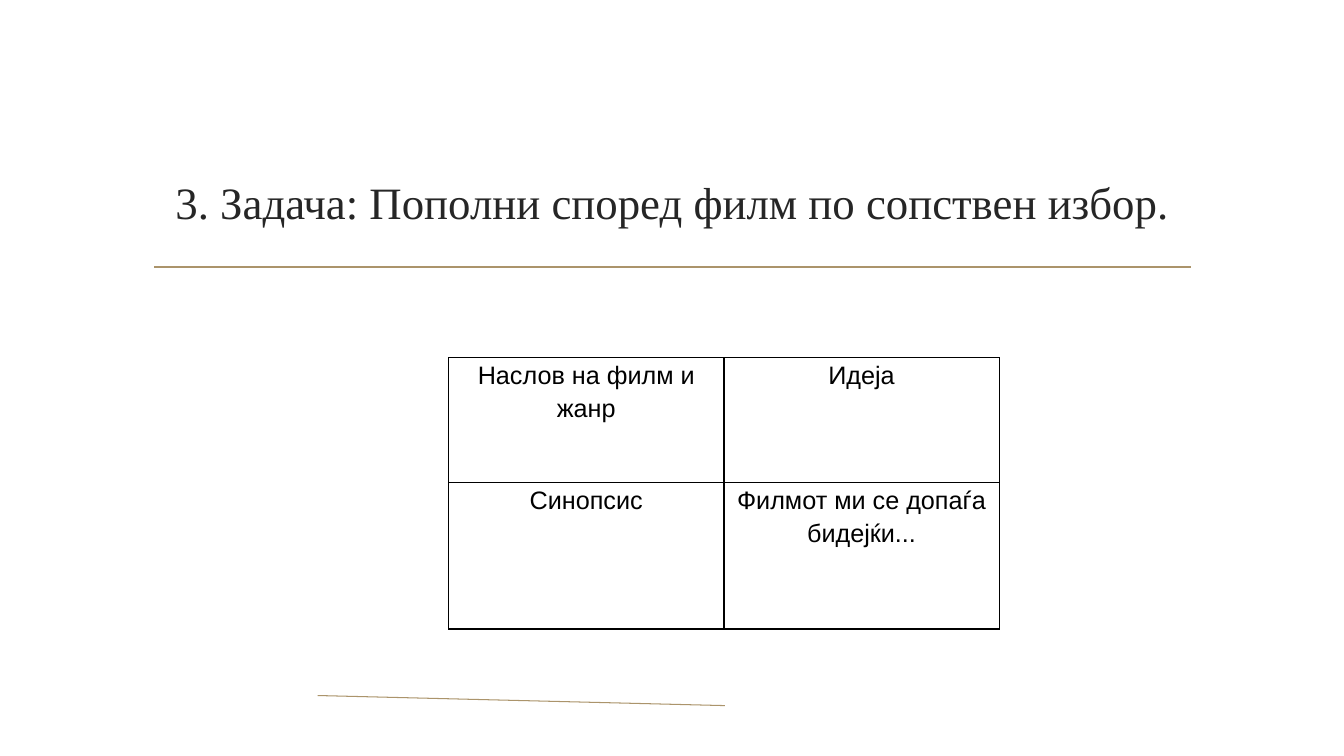
from lxml import etree
from pptx import Presentation
from pptx.dml.color import RGBColor
from pptx.enum.shapes import MSO_CONNECTOR
from pptx.enum.text import MSO_ANCHOR, PP_ALIGN
from pptx.oxml.ns import qn
from pptx.util import Inches, Pt

STRAIGHT = MSO_CONNECTOR.STRAIGHT
MIDDLE = MSO_ANCHOR.MIDDLE
TOP = MSO_ANCHOR.TOP
CENTER = PP_ALIGN.CENTER

GOLD = RGBColor(0xAB, 0x94, 0x6B)
CHARCOAL = RGBColor(0x26, 0x26, 0x26)
BLACK = RGBColor(0x00, 0x00, 0x00)

ROW_HEIGHTS = (1.24, 1.45)
PROMPTS = (
    ("Наслов на филм и жанр", "Идеја"),
    ("Синопсис", "Филмот ми се допаѓа бидејќи..."),
)


def write_text(text_frame, text, *, font, size, color, spacing=1.0):
    text_frame.word_wrap = True
    paragraph = text_frame.paragraphs[0]
    paragraph.alignment = CENTER
    paragraph.line_spacing = spacing
    run = paragraph.add_run()
    run.text = text
    run.font.name = font
    run.font.size = Pt(size)
    run.font.color.rgb = color


def add_rule(slide, start, end, width):
    points = [Inches(value) for value in (*start, *end)]
    rule = slide.shapes.add_connector(STRAIGHT, *points)
    rule.line.color.rgb = GOLD
    rule.line.width = Pt(width)
    etree.SubElement(rule._element.spPr, qn("a:effectLst"))


def add_title(slide, left, top, width, height):
    box = slide.shapes.add_textbox(
        Inches(left), Inches(top), Inches(width), Inches(height))
    box.text_frame.vertical_anchor = MIDDLE
    write_text(box.text_frame, "3. Задача: Пополни според филм по сопствен избор.",
               font="Times New Roman", size=32, color=CHARCOAL)
    rule_top = top + height + 0.05
    add_rule(slide, (left + 0.11, rule_top), (left + width - 0.11, rule_top), 1.25)


def set_borders(cell, color, width):
    properties = cell._tc.get_or_add_tcPr()
    for side in ("lnL", "lnR", "lnT", "lnB"):
        border = etree.SubElement(properties, qn(f"a:{side}"), w=str(Pt(width)))
        fill = etree.SubElement(border, qn("a:solidFill"))
        etree.SubElement(fill, qn("a:srgbClr"), val=str(color))


def add_film_table(slide, left, top, width, row_heights):
    table = slide.shapes.add_table(
        len(PROMPTS), len(PROMPTS[0]), Inches(left), Inches(top),
        Inches(width), Inches(sum(row_heights))).table
    table.first_row = False
    table.horz_banding = False
    for row, height, prompts in zip(table.rows, row_heights, PROMPTS):
        row.height = Inches(height)
        for cell, prompt in zip(row.cells, prompts):
            set_borders(cell, BLACK, 1)
            cell.fill.background()
            cell.margin_left = cell.margin_right = Inches(0.07)
            cell.margin_top = cell.margin_bottom = 0
            cell.vertical_anchor = TOP
            write_text(cell.text_frame, prompt, font="Arial", size=18,
                       color=BLACK, spacing=1.15)


def main():
    presentation = Presentation()
    presentation.slide_width = Inches(13.33)
    presentation.slide_height = Inches(7.5)
    slide = presentation.slides.add_slide(presentation.slide_layouts[6])
    add_title(slide, 1.42, 1.4, 10.5, 1.2)
    add_rule(slide, (3.15, 6.9), (7.19, 7), 0.75)
    add_film_table(slide, 4.45, 3.55, 5.46, ROW_HEIGHTS)
    presentation.save("out.pptx")


if __name__ == "__main__":
    main()
